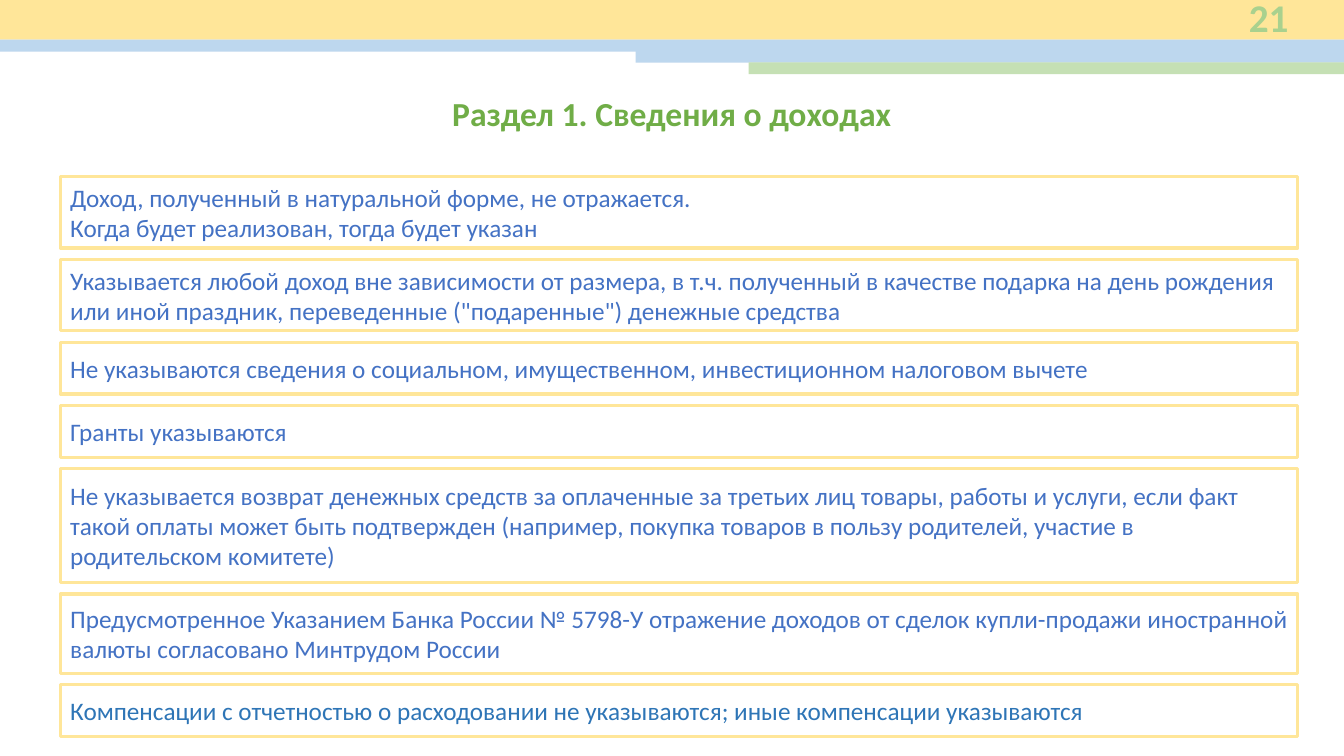
from pptx import Presentation
from pptx.dml.color import RGBColor
from pptx.enum.shapes import MSO_SHAPE
from pptx.enum.text import MSO_ANCHOR, MSO_AUTO_SIZE, PP_ALIGN
from pptx.util import Cm, Pt

COLORS = {
    "yellow": "FFE699",
    "pale blue": "BDD7EE",
    "pale green": "C5E0B4",
    "number green": "A9D18E",
    "title green": "70AD47",
    "blue": "4472C4",
    "dark blue": "2E75B6",
}
SLIDE_WIDTH = 33.87


def color(name):
    return RGBColor.from_string(COLORS[name])


def write(shape, text, size, color_name, align, bold=False):
    """Fill the shape with one formatted paragraph; a newline breaks the line."""
    frame = shape.text_frame
    frame.word_wrap = True
    frame.vertical_anchor = MSO_ANCHOR.MIDDLE
    paragraph = frame.paragraphs[0]
    paragraph.text = text
    paragraph.alignment = align
    for run in paragraph.runs:
        run.font.name = "Calibri"
        run.font.size = Pt(size)
        run.font.bold = bold
        run.font.color.rgb = color(color_name)


presentation = Presentation()
presentation.slide_width = Cm(SLIDE_WIDTH)
presentation.slide_height = Cm(19.05)
slide = presentation.slides.add_slide(presentation.slide_layouts[5])

# Header bands: left, top, height, colour; each runs to the right edge
bands = [
    (0, 0, 1, "yellow"),
    (0, 1, 0.3, "pale blue"),
    (16.02, 1.28, 0.3, "pale blue"),
    (18.87, 1.57, 0.3, "pale green"),
]
for left, top, height, fill in bands:
    band = slide.shapes.add_shape(
        MSO_SHAPE.RECTANGLE, Cm(left), Cm(top), Cm(SLIDE_WIDTH - left), Cm(height))
    band.shadow.inherit = False
    band.fill.solid()
    band.fill.fore_color.rgb = color(fill)
    band.line.fill.background()

slide_number = slide.shapes.add_textbox(Cm(29.54), Cm(-0.13), Cm(3.18), Cm(1.12))
write(slide_number, "21", 28, "number green", PP_ALIGN.RIGHT, bold=True)

title = slide.shapes.title
title.left, title.top, title.width, title.height = Cm(1.52), Cm(2.2), Cm(30.81), Cm(1.28)
write(title, "Раздел 1. Сведения о доходах", 24, "title green", PP_ALIGN.CENTER, bold=True)
title.text_frame.auto_size = MSO_AUTO_SIZE.SHAPE_TO_FIT_TEXT

# Rules on income: box height, text colour, text
rules = [
    (1.8, "blue", "Доход, полученный в натуральной форме, не отражается.\n"
                  "Когда будет реализован, тогда будет указан"),
    (1.8, "blue", "Указывается любой доход вне зависимости от размера, в т.ч. полученный "
                  "в качестве подарка на день рождения или иной праздник, переведенные "
                  "(\"подаренные\") денежные средства"),
    (1.3, "blue", "Не указываются сведения о социальном, имущественном, "
                  "инвестиционном налоговом вычете"),
    (1.3, "blue", "Гранты указываются"),
    (2.87, "blue", "Не указывается возврат денежных средств за оплаченные за третьих лиц "
                   "товары, работы и услуги, если факт такой оплаты может быть подтвержден "
                   "(например, покупка товаров в пользу родителей, участие в "
                   "родительском комитете)"),
    (2, "blue", "Предусмотренное Указанием Банка России № 5798-У отражение доходов "
                "от сделок купли-продажи иностранной валюты согласовано Минтрудом России"),
    (1.3, "dark blue", "Компенсации с отчетностью о расходовании не указываются; "
                       "иные компенсации указываются"),
]
GAP = 0.29
top = 4.45
for height, text_color, text in rules:
    box = slide.shapes.add_shape(
        MSO_SHAPE.RECTANGLE, Cm(1.52), Cm(top), Cm(31.19), Cm(height))
    box.shadow.inherit = False
    box.fill.background()
    box.line.color.rgb = color("yellow")
    box.line.width = Pt(2.25)
    write(box, text, 18, text_color, PP_ALIGN.LEFT)
    top += height + GAP

presentation.save("out.pptx")
